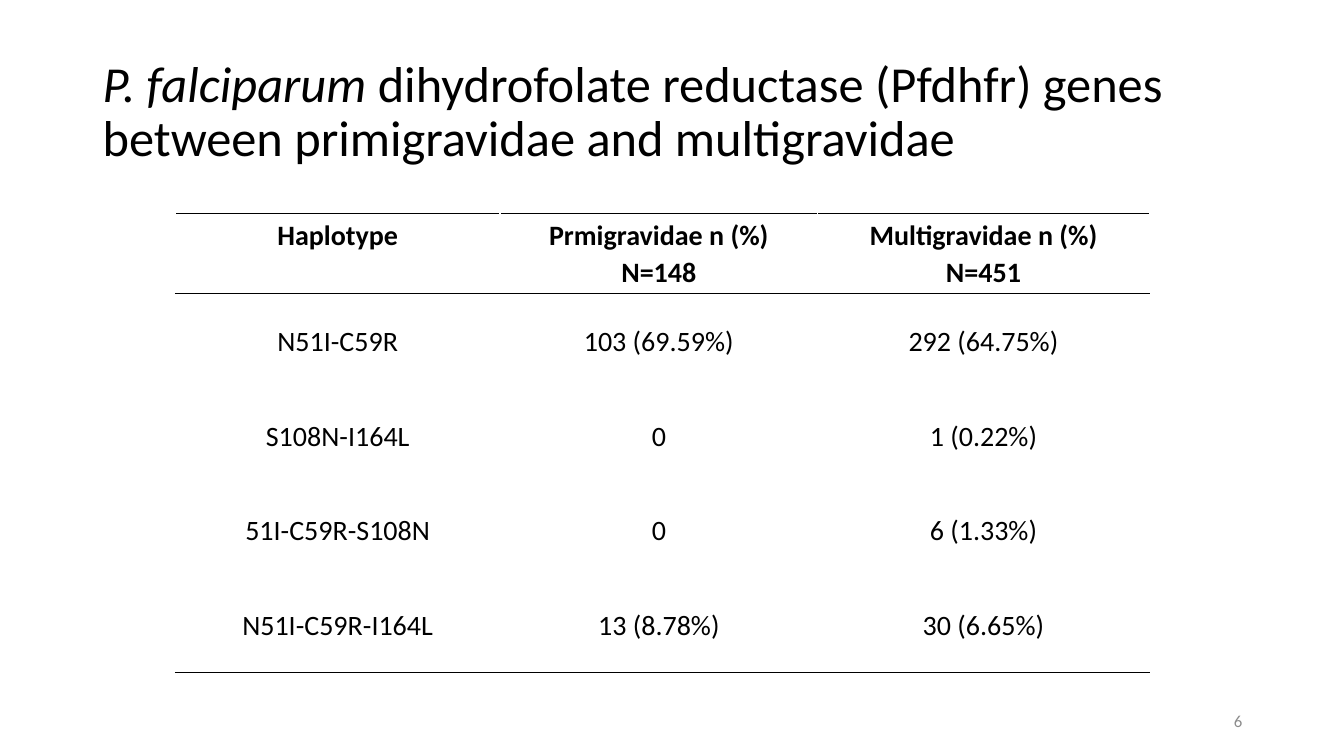
from lxml import etree
from pptx import Presentation
from pptx.dml.color import RGBColor
from pptx.enum.text import MSO_ANCHOR as ANCHOR, PP_ALIGN as ALIGN
from pptx.oxml.ns import qn
from pptx.util import Inches, Pt

BLACK = RGBColor(0x00, 0x00, 0x00)
GRAY = RGBColor(0x8C, 0x8C, 0x8C)

COLS = [3.22, 3.15, 3.29]
HEADER_H, ROW_H = 0.79, 0.94
ROWS = [
    ["Haplotype", "Prmigravidae n (%)\nN=148", "Multigravidae n (%)\nN=451"],
    ["N51I-C59R", "103 (69.59%)", "292 (64.75%)"],
    ["S108N-I164L", "0", "1 (0.22%)"],
    ["51I-C59R-S108N", "0", "6 (1.33%)"],
    ["N51I-C59R-I164L", "13 (8.78%)", "30 (6.65%)"],
]
LAST = len(ROWS) - 1


def write(tf, text, size=20, color=BLACK, bold=False, italic_start="",
          align=ALIGN.CENTER, spacing=1.0):
    """Fill a text frame, one paragraph a line, after an optional italic start."""
    for i, line in enumerate(text.split("\n")):
        p = tf.paragraphs[0] if i == 0 else tf.add_paragraph()
        p.alignment, p.line_spacing = align, spacing
        parts = [(line, False)]
        if italic_start and i == 0:
            parts.insert(0, (italic_start, True))
        for part, italic in parts:
            r = p.add_run()
            r.text = part
            f = r.font
            f.name, f.size, f.bold, f.italic = "Calibri", Pt(size), bold, italic
            f.color.rgb = color


def rule(cell, *sides):
    """Draw 1 pt black borders on the named sides of a cell."""
    for i, side in enumerate(sides):
        ln = etree.Element(qn(f"a:{side}"), w=str(Pt(1)))
        fill = etree.SubElement(ln, qn("a:solidFill"))
        etree.SubElement(fill, qn("a:srgbClr"), val=str(BLACK))
        cell._tc.get_or_add_tcPr().insert(i, ln)


prs = Presentation()
prs.slide_width, prs.slide_height = Inches(13.33), Inches(7.5)
s = prs.slides.add_slide(prs.slide_layouts[6])

# Title and slide number
title = s.shapes.add_textbox(Inches(0.92), Inches(0.4), Inches(11.5), Inches(1.45))
number = s.shapes.add_textbox(Inches(9.42), Inches(6.95), Inches(3), Inches(0.4))
for box in (title, number):
    box.text_frame.word_wrap = True
    box.text_frame.vertical_anchor = ANCHOR.MIDDLE
write(title.text_frame,
      " dihydrofolate reductase (Pfdhfr) genes between primigravidae and multigravidae",
      size=36, italic_start="P. falciparum", align=ALIGN.LEFT, spacing=0.9)
write(number.text_frame, "6", size=12, color=GRAY, align=ALIGN.RIGHT)

# Haplotype table
table = s.shapes.add_table(len(ROWS), len(COLS), Inches(1.74), Inches(2.12),
                           Inches(sum(COLS)), Inches(HEADER_H + LAST * ROW_H)).table
table.first_row = table.horz_banding = False
for col, width in zip(table.columns, COLS):
    col.width = Inches(width)
for i, values in enumerate(ROWS):
    table.rows[i].height = Inches(ROW_H if i else HEADER_H)
    for j, value in enumerate(values):
        cell = table.cell(i, j)
        cell.fill.background()
        cell.margin_left = cell.margin_right = Inches(0.05)
        cell.margin_top = cell.margin_bottom = 0
        cell.vertical_anchor = ANCHOR.MIDDLE
        write(cell.text_frame, value, bold=i == 0, spacing=1.07)
        if i == 0:
            rule(cell, "lnT", "lnB")
        elif i == 1:
            rule(cell, "lnT")
        elif i == LAST:
            rule(cell, "lnB")

# "Haplotype" lines up with the first line of the other headings
corner = table.cell(0, 0)
corner.vertical_anchor = ANCHOR.TOP
corner.margin_top = Inches(0.03)

prs.save("out.pptx")
